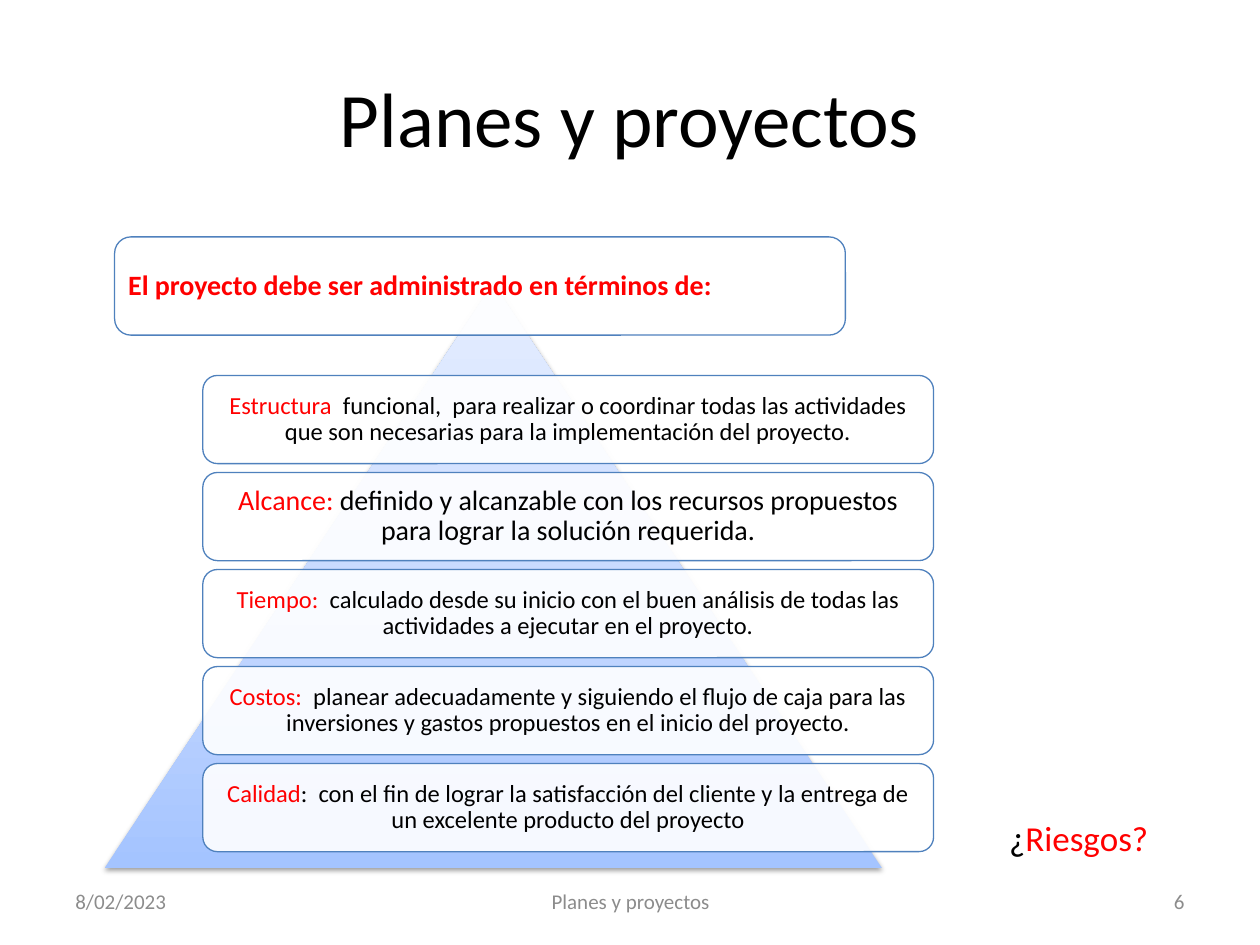
from lxml import etree
from pptx import Presentation
from pptx.dml.color import RGBColor
from pptx.enum.shapes import MSO_SHAPE
from pptx.enum.text import MSO_ANCHOR, PP_ALIGN
from pptx.oxml.ns import qn
from pptx.util import Inches, Pt

LEFT, CENTER, RIGHT = PP_ALIGN.LEFT, PP_ALIGN.CENTER, PP_ALIGN.RIGHT
MIDDLE, TOP = MSO_ANCHOR.MIDDLE, MSO_ANCHOR.TOP
TRIANGLE, ROUNDED = MSO_SHAPE.ISOSCELES_TRIANGLE, MSO_SHAPE.ROUNDED_RECTANGLE

BLACK = RGBColor(0x00, 0x00, 0x00)
WHITE = RGBColor(0xFF, 0xFF, 0xFF)
RED = RGBColor(0xFF, 0x00, 0x00)
GRAY = RGBColor(0x8C, 0x8C, 0x8C)
BLUE = RGBColor(0x4F, 0x81, 0xBD)
PYRAMID_STOPS = [
    (0, RGBColor(0xA4, 0xC4, 0xFF)),
    (35, RGBColor(0xBF, 0xD4, 0xFF)),
    (100, RGBColor(0xE6, 0xEE, 0xFF)),
]

prs = Presentation()
prs.slide_width, prs.slide_height = Inches(10), Inches(7.5)
slide = prs.slides.add_slide(prs.slide_layouts[6])
shapes = slide.shapes


def write(shape, runs, size, align, anchor=MIDDLE, wrap=True, bold=False):
    """Fill the shape with one paragraph of (text, color) runs."""
    frame = shape.text_frame
    frame.word_wrap = wrap
    frame.vertical_anchor = anchor
    paragraph = frame.paragraphs[0]
    paragraph.alignment = align
    for text, color in runs:
        run = paragraph.add_run()
        run.text = text
        run.font.name = "Calibri"
        run.font.size = Pt(size)
        run.font.bold = bold
        run.font.color.rgb = color


def add_card(left, top, height, runs, size, margin, align, bold=False):
    """Add a translucent rounded box with text."""
    card = shapes.add_shape(ROUNDED, Inches(left), Inches(top), Inches(5.8), Inches(height))
    card.shadow.inherit = False
    card.fill.solid()
    card.fill.fore_color.rgb = WHITE
    white = card.fill._xPr.find(qn("a:solidFill"))[0]
    etree.SubElement(white, qn("a:alpha"), val="90000")
    card.line.color.rgb = BLUE
    card.line.width = Pt(0.75)
    write(card, runs, size, align, bold=bold)
    frame = card.text_frame
    frame.margin_left = frame.margin_right = Inches(margin)
    frame.margin_top = frame.margin_bottom = Inches(margin)
    frame.paragraphs[0].line_spacing = 0.9


# Title and footer
captions = [
    ("Planes y proyectos", 0.5, 0.3, 9, 1.25, 44, BLACK, CENTER),
    ("8/02/2023", 0.5, 6.95, 2.33, 0.4, 12, GRAY, LEFT),
    ("Planes y proyectos", 3.42, 6.95, 3.17, 0.4, 12, GRAY, CENTER),
    ("6", 7.17, 6.95, 2.33, 0.4, 12, GRAY, RIGHT),
]
for text, left, top, width, height, size, color, align in captions:
    caption = shapes.add_textbox(Inches(left), Inches(top), Inches(width), Inches(height))
    write(caption, [(text, color)], size, align)

# Pyramid, darkest at its base, with a soft shadow below
pyramid = shapes.add_shape(TRIANGLE, Inches(0.83), Inches(2.25), Inches(6.17), Inches(4.64))
pyramid.line.fill.background()
pyramid.fill.gradient()
pyramid.fill.gradient_angle = 90
stop_list = pyramid._element.spPr.find(".//" + qn("a:gsLst"))
for stop in list(stop_list):
    stop_list.remove(stop)
for position, color in PYRAMID_STOPS:
    stop = etree.SubElement(stop_list, qn("a:gs"), pos=str(position * 1000))
    etree.SubElement(stop, qn("a:srgbClr"), val=str(color))
pyramid.shadow.inherit = False
effects = pyramid._element.spPr.find(qn("a:effectLst"))
shadow = etree.SubElement(
    effects, qn("a:outerShdw"), blurRad=str(Pt(3.1)), dist=str(Pt(1.6)),
    dir="5400000", rotWithShape="0",
)
shadow_color = etree.SubElement(shadow, qn("a:srgbClr"), val=str(BLACK))
etree.SubElement(shadow_color, qn("a:alpha"), val="38000")

# Heading card and the five terms
heading = "El proyecto debe ser administrado en términos de:"
add_card(0.91, 1.88, 0.78, [(heading, RED)], 16, 0.07, LEFT, bold=True)

terms = [
    ("Estructura ", " funcional,  para realizar o coordinar todas las actividades "
     "que son necesarias para la implementación del proyecto.", 14, 0.06),
    ("Alcance: ", "definido y alcanzable con los recursos propuestos "
     "para lograr la solución requerida.", 16, 0.07),
    ("Tiempo: ", " calculado desde su inicio con el buen análisis de todas las "
     "actividades a ejecutar en el proyecto.", 14, 0.06),
    ("Costos:", "  planear adecuadamente y siguiendo el flujo de caja para las "
     "inversiones y gastos propuestos en el inicio del proyecto.", 14, 0.06),
    ("Calidad", ":  con el fin de lograr la satisfacción del cliente y la entrega de "
     "un excelente producto del proyecto", 14, 0.06),
]
for row, (term, detail, size, margin) in enumerate(terms):
    add_card(1.61, 2.98 + 0.77 * row, 0.7, [(term, RED), (detail, BLACK)], size, margin, CENTER)

# Closing question
risks = shapes.add_textbox(Inches(7.91), Inches(6.43), Inches(1.32), Inches(0.44))
write(risks, [("¿", BLACK), ("Riesgos?", RED)], 20, LEFT, anchor=TOP, wrap=False)

prs.save("out.pptx")
